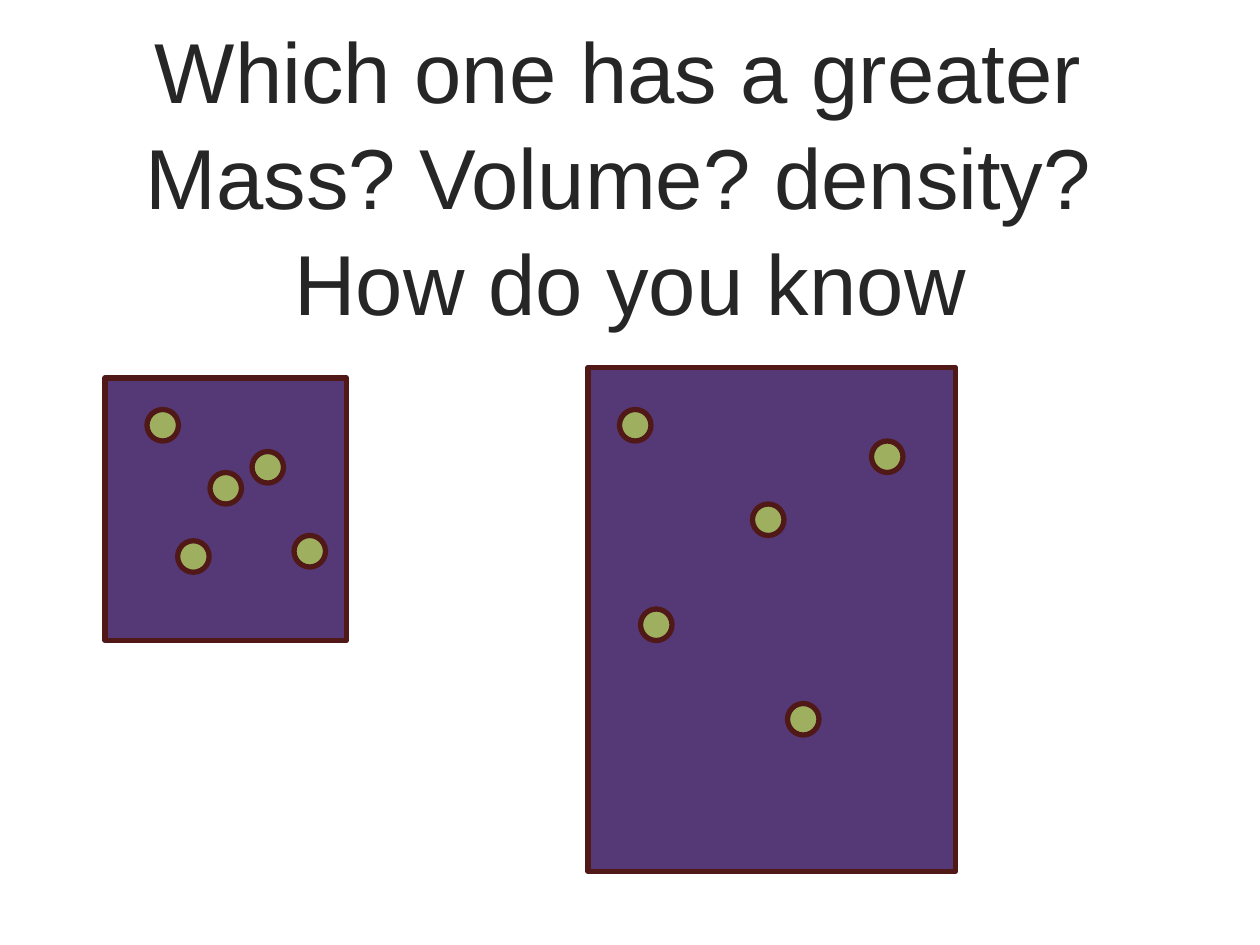
from dataclasses import dataclass

from pptx import Presentation
from pptx.dml.color import RGBColor
from pptx.enum.shapes import MSO_SHAPE as Shape
from pptx.enum.text import MSO_ANCHOR as Anchor, PP_ALIGN as Align
from pptx.util import Pt

# The trailing spaces are part of the centred lines; "\v" is a line break.
QUESTION = "Which one has a greater \vMass? Volume? density? \vHow do you know"

# Particle positions are offsets from the top left corner of their box.
BOXES = [
    {"at": (60, 216), "size": (138, 150),
     "particles": [(24, 18), (84, 42), (60, 54), (41.5, 93), (108, 90)]},
    {"at": (336, 210), "size": (210, 288),
     "particles": [(114, 192), (162, 42), (30, 138), (94, 78), (18, 24)]},
]
PARTICLE_SIZE = (18, 18)


@dataclass(frozen=True)
class Theme:
    font: str = "Arial"
    question_size: float = 48.6
    line_spacing: float = 1.04
    text: RGBColor = RGBColor(0x26, 0x26, 0x26)
    box: RGBColor = RGBColor(0x55, 0x38, 0x76)
    particle: RGBColor = RGBColor(0x9E, 0xB0, 0x60)
    outline: RGBColor = RGBColor(0x51, 0x18, 0x18)
    outline_width: float = 3


THEME = Theme()


def add_question(slide):
    question = slide.shapes.add_textbox(Pt(36), Pt(54), Pt(648), Pt(90))
    frame = question.text_frame
    frame.word_wrap = True
    frame.vertical_anchor = Anchor.MIDDLE
    paragraph = frame.paragraphs[0]
    paragraph.text = QUESTION
    paragraph.alignment = Align.CENTER
    paragraph.line_spacing = THEME.line_spacing
    paragraph.font.name = THEME.font
    paragraph.font.size = Pt(THEME.question_size)
    paragraph.font.color.rgb = THEME.text


def add_outlined(slide, preset, at, size, fill):
    shape = slide.shapes.add_shape(preset, *map(Pt, at + size))
    shape.shadow.inherit = False
    shape.fill.solid()
    shape.fill.fore_color.rgb = fill
    shape.line.color.rgb = THEME.outline
    shape.line.width = Pt(THEME.outline_width)


def main():
    deck = Presentation()
    deck.slide_width, deck.slide_height = Pt(720), Pt(540)
    slide = deck.slides.add_slide(deck.slide_layouts[6])

    add_question(slide)
    for box in BOXES:
        left, top = box["at"]
        add_outlined(slide, Shape.RECTANGLE, box["at"], box["size"], THEME.box)
        for dx, dy in box["particles"]:
            add_outlined(slide, Shape.FLOWCHART_CONNECTOR,
                         (left + dx, top + dy), PARTICLE_SIZE, THEME.particle)

    deck.save("out.pptx")


if __name__ == "__main__":
    main()
